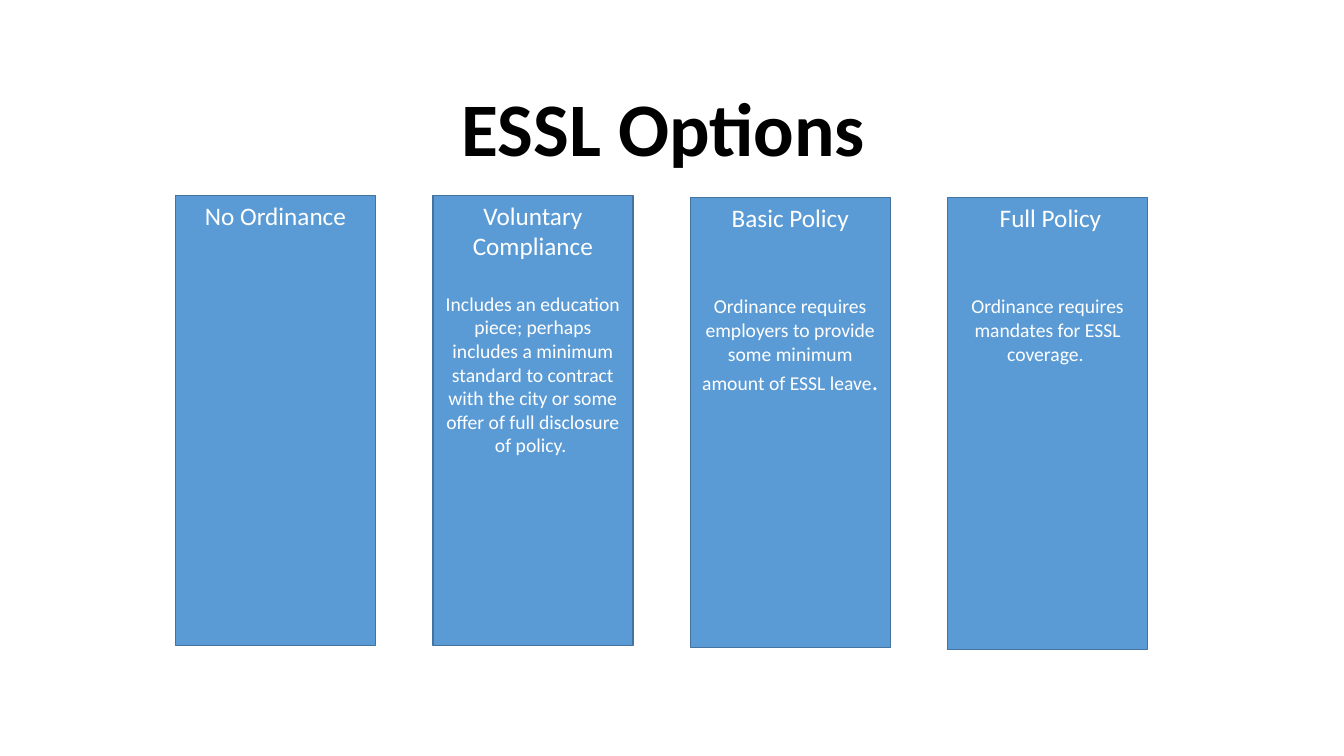
from dataclasses import dataclass

from pptx import Presentation
from pptx.dml.color import RGBColor as Color
from pptx.enum.shapes import MSO_SHAPE as Shape
from pptx.enum.text import MSO_ANCHOR as Anchor, MSO_AUTO_SIZE as AutoSize, PP_ALIGN as Align
from pptx.util import Pt

TITLE = "ESSL Options "
OPTIONS = [
    {"heading": "No Ordinance", "body": [], "gap": 0, "top": 139.7, "height": 321.3},
    {"heading": "Voluntary Compliance",
     "body": [("Includes an education piece; perhaps includes a minimum standard to contract "
               "with the city or some offer of full disclosure of policy. ", 14)],
     "gap": 22, "top": 139.7, "height": 321.3},
    {"heading": "Basic Policy",
     "body": [("Ordinance requires employers to provide some minimum amount of ESSL leave", 14),
              (". ", 18)],
     "gap": 44, "top": 141.1, "height": 321.3},
    {"heading": " Full Policy",
     "body": [("Ordinance requires mandates for ESSL coverage. ", 14)],
     "gap": 44, "top": 141.1, "height": 322.6},
]
FIRST_LEFT, COLUMN_STEP, COLUMN_WIDTH = 125.4, 183.85, 142.8


@dataclass(frozen=True)
class Theme:
    font: str = "Calibri"
    title_size: int = 54
    heading_size: int = 18
    ink: str = "000000"
    light: str = "FFFFFF"
    fill: str = "5B9BD5"
    line: str = "43739E"


theme = Theme()


def write(para, text, *, size, color, bold=False):
    para.alignment = Align.CENTER
    span = para.add_run()
    span.text = text
    span.font.name = theme.font
    span.font.size = Pt(size)
    span.font.bold = bold
    span.font.color.rgb = Color.from_string(color)


def add_title(page):
    box = page.shapes.title
    box.left, box.top, box.width, box.height = Pt(120), Pt(63.4), Pt(720), Pt(63.4)
    frame = box.text_frame
    frame.vertical_anchor = Anchor.BOTTOM
    frame.auto_size = AutoSize.NONE
    para = frame.paragraphs[0]
    para.line_spacing = 0.9
    write(para, TITLE, size=theme.title_size, color=theme.ink, bold=True)


def add_option(page, left, option):
    box = page.shapes.add_shape(Shape.FLOWCHART_PROCESS, Pt(left), Pt(option["top"]),
                                Pt(COLUMN_WIDTH), Pt(option["height"]))
    box.shadow.inherit = False
    box.fill.solid()
    box.fill.fore_color.rgb = Color.from_string(theme.fill)
    box.line.color.rgb = Color.from_string(theme.line)
    box.line.width = Pt(1)
    frame = box.text_frame
    frame.word_wrap = True
    frame.vertical_anchor = Anchor.TOP
    write(frame.paragraphs[0], option["heading"], size=theme.heading_size, color=theme.light)
    if option["body"]:
        para = frame.add_paragraph()
        para.space_before = Pt(option["gap"])
        for text, size in option["body"]:
            write(para, text, size=size, color=theme.light)


def main():
    deck = Presentation()
    deck.slide_width, deck.slide_height = Pt(960), Pt(540)
    page = deck.slides.add_slide(deck.slide_layouts.get_by_name("Title Only"))
    add_title(page)
    for index, option in enumerate(OPTIONS):
        add_option(page, FIRST_LEFT + index * COLUMN_STEP, option)
    deck.save("out.pptx")


if __name__ == "__main__":
    main()
